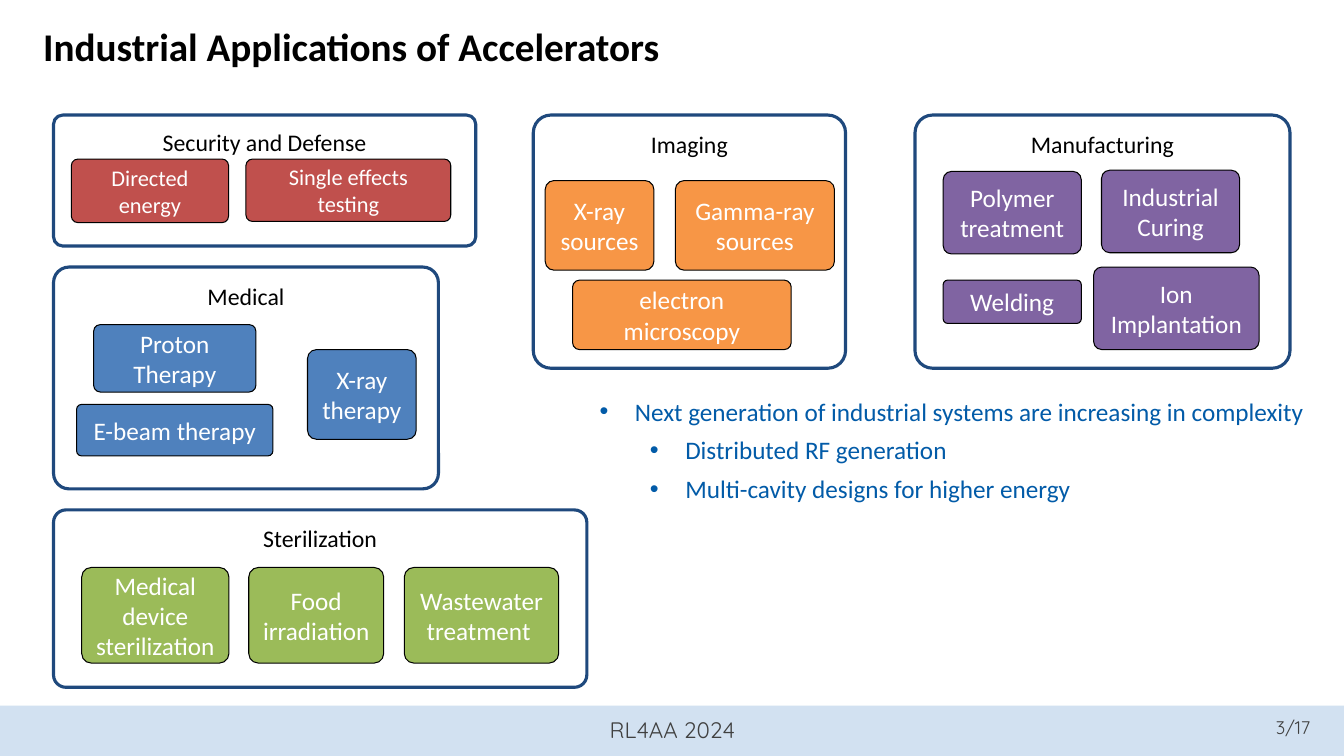
from dataclasses import dataclass
from lxml.etree import SubElement
from pptx import Presentation
from pptx.dml.color import RGBColor as RGB
from pptx.enum.shapes import MSO_SHAPE as Shape
from pptx.enum.text import MSO_ANCHOR as Anchor, PP_ALIGN as Align
from pptx.oxml.ns import qn
from pptx.util import Cm, Pt


@dataclass(frozen=True)
class Theme:
    font: str = "Calibri"
    footer_font: str = "Quicksand"
    black: str = "000000"
    white: str = "FFFFFF"
    navy: str = "1F497D"
    bullet: str = "025BA8"
    footer: str = "404040"
    band: str = "4484C5"
    red: str = "C0504D"
    blue: str = "4F81BD"
    green: str = "9BBB59"
    orange: str = "F79646"
    purple: str = "8064A2"
    title_size: int = 28
    panel_size: int = 17
    body_size: int = 18
    small_size: int = 16
    page_size: int = 13


T = Theme()
WIDTH, HEIGHT = 33.87, 19.05
TOP, PANEL_GAP = 2.9, 0.53
TITLE = "Industrial Applications of Accelerators"

COLUMNS = [
    (1.35, [
        ("Security and Defense", 10.64, 3.3, T.red, T.small_size, [
            ("Directed energy", 0.45, 1.11, 3.96, 1.6),
            ("Single effects testing", 4.85, 1.11, 5.16, 1.57),
        ]),
        ("Medical", 9.7, 5.59, T.blue, T.body_size, [
            ("Proton Therapy", 1.01, 1.45, 4.09, 1.7),
            ("E-beam therapy", 0.58, 3.46, 4.95, 1.3),
            ("X-ray therapy", 6.4, 2.08, 2.74, 2.26),
        ]),
        ("Sterilization", 13.44, 4.47, T.green, T.body_size, [
            ("Medical device sterilization", 0.71, 1.45, 3.71, 2.41),
            ("Food irradiation", 4.92, 1.45, 3.4, 2.41),
            ("Wastewater treatment ", 8.84, 1.45, 3.89, 2.41),
        ]),
    ]),
    (13.44, [
        ("Imaging", 7.87, 6.38, T.orange, T.body_size, [
            ("X-ray sources", 0.3, 1.65, 2.74, 2.26),
            ("Gamma-ray sources", 3.58, 1.65, 4.01, 2.26),
            ("electron microscopy", 0.99, 4.16, 5.51, 1.75),
        ]),
    ]),
    (23.06, [
        ("Manufacturing", 9.45, 6.38, T.purple, T.body_size, [
            ("Polymer treatment", 0.71, 1.42, 3.48, 2.08),
            ("Industrial Curing", 4.7, 1.39, 3.48, 2.08),
            ("Ion Implantation", 4.5, 3.83, 4.17, 2.08),
            ("Welding", 0.71, 4.16, 3.48, 1.09),
        ]),
    ]),
]

BULLETS = [
    (0, "Next generation of industrial systems are increasing in complexity"),
    (1, "Distributed RF generation"),
    (1, "Multi-cavity designs for higher energy"),
]

FOOTER = [
    ("3/17", (30.48, 18.06, 2.54, 0.81), T.page_size, Align.RIGHT, Anchor.TOP),
    ("RL4AA 2024", (10.72, 17.93, 12.45, 0.89), T.small_size, Align.CENTER, Anchor.MIDDLE),
]


def add_text(p, text, size=T.body_size, color=T.black, font=T.font, bold=False, align=Align.LEFT):
    p.alignment = align
    r = p.add_run()
    r.text = text
    r.font.size = Pt(size)
    r.font.name = font
    r.font.bold = bold
    r.font.color.rgb = RGB.from_string(color)


def set_frame(tf, inset, anchor):
    tf.word_wrap = True
    tf.vertical_anchor = anchor
    tf.margin_left = tf.margin_right = tf.margin_top = tf.margin_bottom = Cm(inset)
    return tf.paragraphs[0]


def add_box(s, box, inset=0.25, anchor=Anchor.TOP):
    tf = s.shapes.add_textbox(*map(Cm, box)).text_frame
    set_frame(tf, inset, anchor)
    return tf


def add_card(s, box, radius, text, size, color, line, weight, fill=None, anchor=Anchor.MIDDLE):
    sp = s.shapes.add_shape(Shape.ROUNDED_RECTANGLE, *map(Cm, box))
    sp.shadow.inherit = False
    sp.adjustments[0] = radius
    if fill:
        sp.fill.solid()
        sp.fill.fore_color.rgb = RGB.from_string(fill)
    else:
        sp.fill.background()
    sp.line.color.rgb = RGB.from_string(line)
    sp.line.width = Pt(weight)
    p = set_frame(sp.text_frame, 0.25, anchor)
    add_text(p, text, size=size, color=color, align=Align.CENTER)


def add_band(s):
    sp = s.shapes.add_shape(Shape.RECTANGLE, 0, Cm(17.78), Cm(WIDTH), Cm(HEIGHT - 17.78))
    sp.shadow.inherit = False
    sp.line.fill.background()
    sp.fill.solid()
    sp.fill.fore_color.rgb = RGB.from_string(T.band)
    color = next(sp.fill._xPr.iter(qn("a:srgbClr")))
    SubElement(color, qn("a:alpha"), val="24000")


def add_panels(s):
    for left, panels in COLUMNS:
        top = TOP
        for name, w, h, fill, size, chips in panels:
            add_card(s, (left, top, w, h), 0.07, name, T.panel_size, T.black,
                     T.navy, 2.25, anchor=Anchor.TOP)
            for text, dx, dy, cw, ch in chips:
                add_card(s, (left + dx, top + dy, cw, ch), 0.1, text, size, T.white,
                         T.black, 0.75, fill=fill)
            top += h + PANEL_GAP


def add_bullets(s):
    tf = add_box(s, (14.78, 9.73, 18.64, 6.4))
    for i, (level, text) in enumerate(BULLETS):
        p = tf.add_paragraph() if i else tf.paragraphs[0]
        p.level = level
        if i:
            p.space_before = Pt(6)
        pPr = p._p.get_or_add_pPr()
        pPr.set("marL", str(Cm(0.97 + 1.27 * level)))
        pPr.set("indent", str(Cm(-0.89)))
        SubElement(SubElement(pPr, qn("a:buClr")), qn("a:srgbClr"), val=T.bullet)
        SubElement(pPr, qn("a:buFont"), typeface="Arial")
        SubElement(pPr, qn("a:buChar"), char="•")
        add_text(p, text, color=T.bullet)


def main():
    prs = Presentation()
    prs.slide_width, prs.slide_height = Cm(WIDTH), Cm(HEIGHT)
    s = prs.slides.add_slide(prs.slide_layouts[6])
    add_band(s)
    for text, box, size, align, anchor in FOOTER:
        tf = add_box(s, box, inset=0, anchor=anchor)
        add_text(tf.paragraphs[0], text, size=size, color=T.footer,
                 font=T.footer_font, align=align)
    tf = add_box(s, (0.84, 0.2, 32.18, 1.9), anchor=Anchor.MIDDLE)
    add_text(tf.paragraphs[0], TITLE, size=T.title_size, bold=True)
    add_panels(s)
    add_bullets(s)
    prs.save("out.pptx")


if __name__ == "__main__":
    main()
